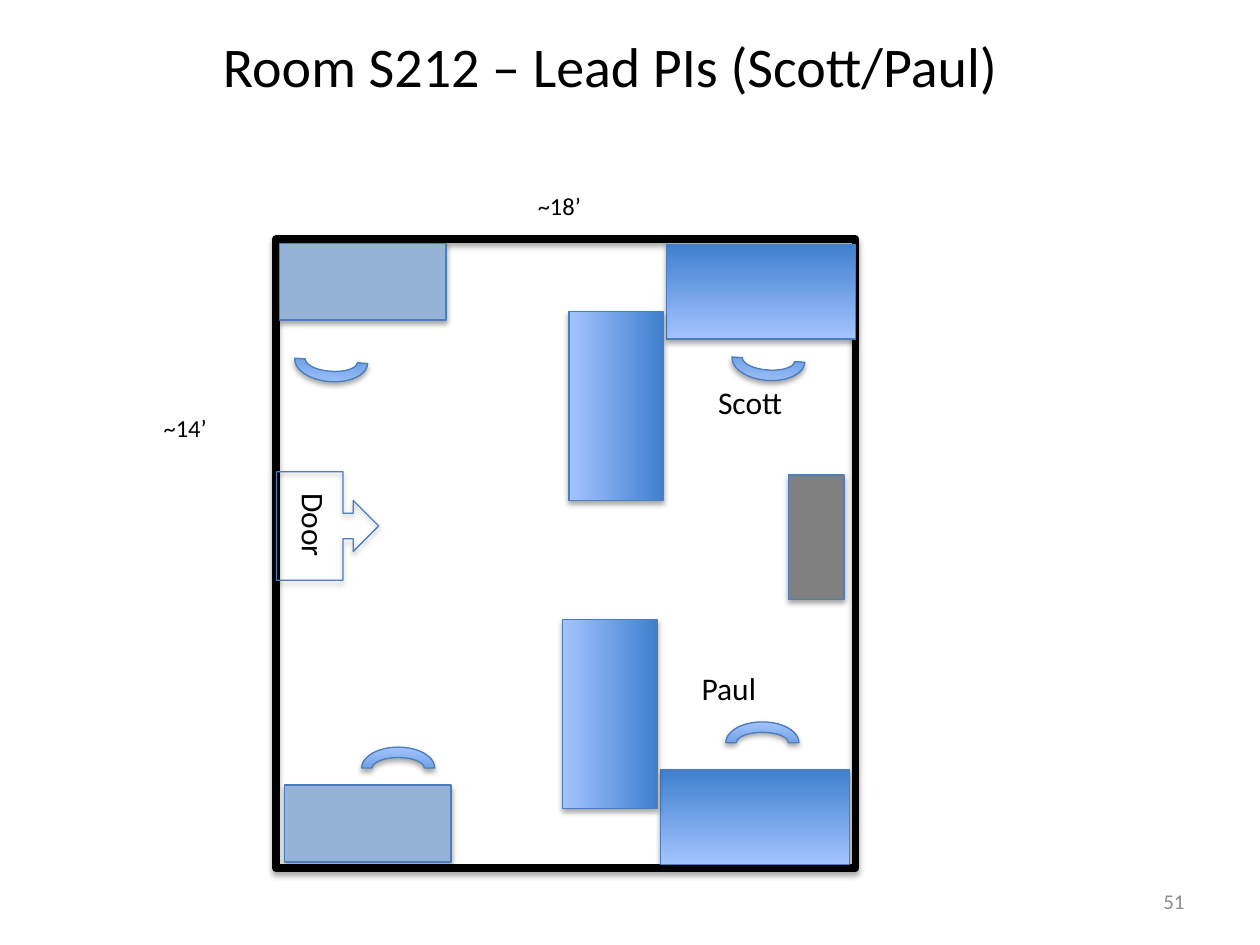
import lxml.etree
import pptx
import pptx.dml.color
import pptx.enum.shapes
import pptx.enum.text
import pptx.oxml.ns
import pptx.util
from pptx.util import Inches

SHAPE = pptx.enum.shapes.MSO_SHAPE
ALIGN = pptx.enum.text.PP_ALIGN
MIDDLE = pptx.enum.text.MSO_ANCHOR.MIDDLE
EDGE = "4B7EBC"
DESK_BLUES = ("3F80CE", "A4C4FF")


def rgb(value):
    """Turn a hex string into a colour."""
    return pptx.dml.color.RGBColor.from_string(value)


def format_text(tf, text, size, color="000000", align=ALIGN.LEFT):
    """Write one formatted paragraph into a text frame."""
    p = tf.paragraphs[0]
    p.text = text
    p.alignment = align
    p.font.name = "Calibri"
    p.font.size = pptx.util.Pt(size)
    p.font.color.rgb = rgb(color)


def add_label(s, text, x, y, w, h, size, wrap=True, rotation=0):
    """Add a text box that grows with its text."""
    tb = s.shapes.add_textbox(Inches(x), Inches(y), Inches(w), Inches(h))
    tb.rotation = rotation
    tb.text_frame.word_wrap = wrap
    tb.text_frame.auto_size = pptx.enum.text.MSO_AUTO_SIZE.SHAPE_TO_FIT_TEXT
    format_text(tb.text_frame, text, size)
    return tb


def add_shadow(sp):
    """Give a shape a soft shadow straight below it."""
    qn = pptx.oxml.ns.qn
    sp.shadow.inherit = False
    effects = sp._element.spPr.find(qn("a:effectLst"))
    shadow = lxml.etree.SubElement(
        effects, qn("a:outerShdw"), blurRad=str(pptx.util.Pt(3.1)),
        dist=str(pptx.util.Pt(1.8)), dir="5400000", rotWithShape="0")
    color = lxml.etree.SubElement(shadow, qn("a:srgbClr"), val="000000")
    lxml.etree.SubElement(color, qn("a:alpha"), val="35000")


def add_item(s, kind, x, y, w, h, fill=None, rotation=0, flips=(),
             line=EDGE, width=0.75):
    """Add a shadowed shape with no fill, a plain fill or a gradient."""
    sp = s.shapes.add_shape(kind, Inches(x), Inches(y), Inches(w), Inches(h))
    sp.rotation = rotation
    for flip in flips:
        sp._element.spPr.xfrm.set(flip, "1")
    if fill is None:
        sp.fill.background()
    elif isinstance(fill, str):
        sp.fill.solid()
        sp.fill.fore_color.rgb = rgb(fill)
    else:
        sp.fill.gradient()
        sp.fill.gradient_angle = 90
        for stop, color, position in zip(sp.fill.gradient_stops, fill, (0, 1)):
            stop.color.rgb = rgb(color)
            stop.position = position
    sp.line.color.rgb = rgb(line)
    sp.line.width = pptx.util.Pt(width)
    add_shadow(sp)
    return sp


def add_chair(s, x, y, rotation):
    """Add an arc-shaped chair."""
    add_item(s, SHAPE.BLOCK_ARC, x, y, 0.58, 0.33, DESK_BLUES, rotation,
             ("flipH", "flipV"))


def add_furniture(s, x, y):
    """Place desks, cabinets and chairs relative to the room corner."""
    for dx, dy, rotation in ((3.62, 0.79, 4.2), (0.15, 0.8, 4.2),
                             (3.57, 3.83, 180), (0.68, 4.03, 180)):
        add_chair(s, x + dx, y + dy, rotation)
    for dx, dy in ((0.03, 0.03), (0.07, 4.33)):
        add_item(s, SHAPE.RECTANGLE, x + dx, y + dy, 1.32, 0.61, "95B3D7",
                 180, ("flipH",))
    for dx, dy, rotation in ((3.05, 4.21, 180), (3.1, 0.04, 180),
                             (1.95, 0.95, 270), (1.9, 3.39, 270)):
        add_item(s, SHAPE.RECTANGLE, x + dx, y + dy, 1.5, 0.75, DESK_BLUES,
                 rotation, ("flipH",))
    add_item(s, SHAPE.RECTANGLE, x + 4.07, y + 1.87, 0.44, 0.99, "808080")


def add_door(s, x, y):
    """Add the door arrow with its turned label."""
    add_item(s, SHAPE.UP_ARROW_CALLOUT, x, y, 0.86, 0.81, rotation=90)
    add_label(s, "Door", x - 0.07, y + 0.24, 0.79, 0.4, 18, rotation=90)


def add_room(s, x, y, w, h):
    """Draw the floor plan inside the given box, with its dimensions."""
    add_item(s, SHAPE.RECTANGLE, x, y, w, h, line="000000", width=4.5)
    add_label(s, "~14’", x - 0.99, y + 1.33, 0.66, 0.34, 14)
    add_label(s, "~18’", x + 1.98, y - 0.43, 1.04, 0.34, 14)
    add_furniture(s, x, y)
    add_door(s, x - 0.02, y + 1.87)
    add_label(s, "Scott", x + 3.41, y + 1.09, 0.72, 0.4, 18, wrap=False)
    add_label(s, "Paul", x + 3.28, y + 3.36, 0.64, 0.4, 18, wrap=False)


def add_title(s, text, x, y, w, h):
    """Move and fill the title placeholder."""
    title = s.shapes.title
    title.left, title.top = Inches(x), Inches(y)
    title.width, title.height = Inches(w), Inches(h)
    title.text_frame.vertical_anchor = MIDDLE
    format_text(title.text_frame, text, 32, align=ALIGN.CENTER)


def add_page_number(s, text, x, y, w, h):
    """Add the grey page number."""
    tb = s.shapes.add_textbox(Inches(x), Inches(y), Inches(w), Inches(h))
    tb.text_frame.word_wrap = True
    tb.text_frame.vertical_anchor = MIDDLE
    format_text(tb.text_frame, text, 12, "8C8C8C", ALIGN.RIGHT)


def main():
    """Build and save the slide."""
    prs = pptx.Presentation()
    prs.slide_width, prs.slide_height = Inches(10), Inches(7.5)
    s = prs.slides.add_slide(prs.slide_layouts[5])
    add_title(s, "Room S212 – Lead PIs (Scott/Paul)", 0.5, 0.12, 8.69, 0.8)
    add_room(s, 2.19, 1.9, 4.6, 4.99)
    add_page_number(s, "51", 7.17, 6.95, 2.33, 0.4)
    prs.save("out.pptx")


if __name__ == "__main__":
    main()
